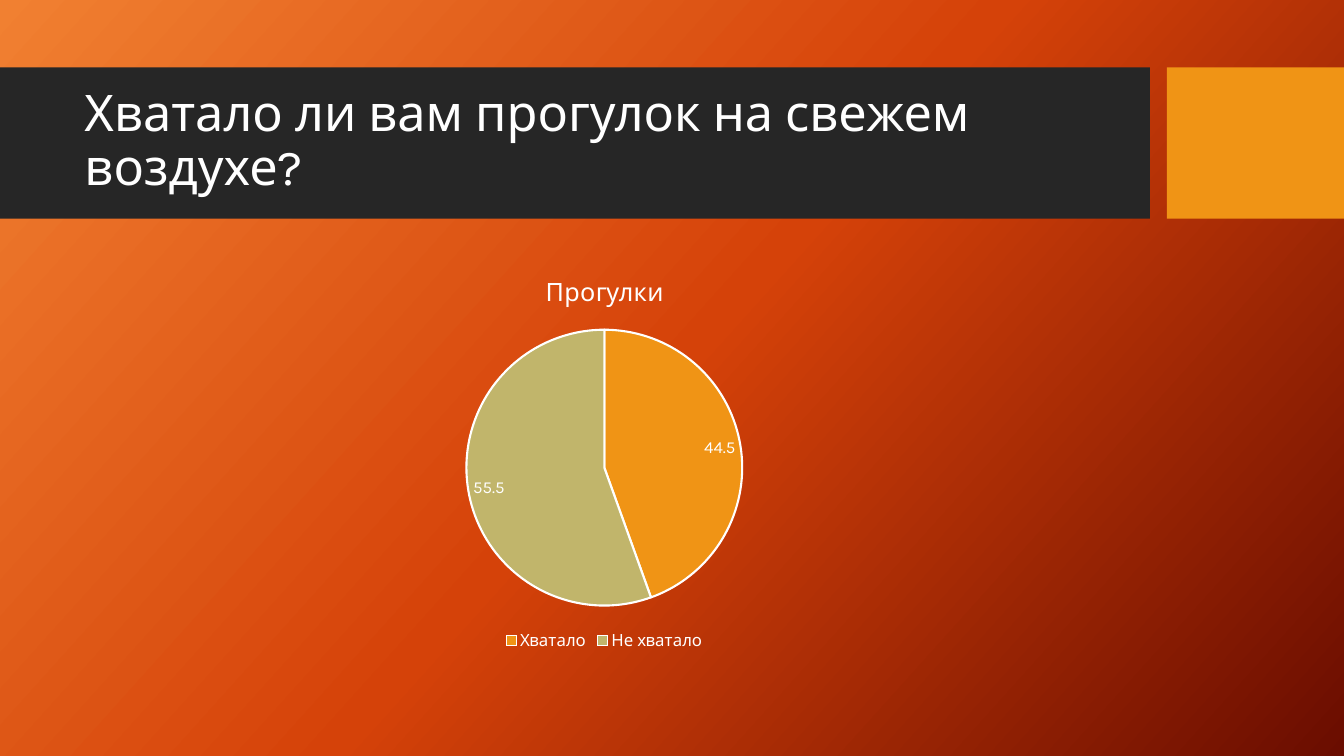
import copy

import pptx
import pptx.chart.data
import pptx.dml.color
import pptx.enum.chart
import pptx.enum.shapes
import pptx.enum.text
import pptx.util

Cm, Pt = pptx.util.Cm, pptx.util.Pt
RGB = pptx.dml.color.RGBColor.from_string

THEME = {
    "font": "Karla",
    "white": "FFFFFF",
    "band": "262626",
    "accent": "F09415",
    "slices": ["F09415", "C1B56B"],
    "background": [(0, "F18031"), (0.5, "D54209"), (1, "6A0D00")],
    "title": 36,
    "chart_title": 18,
    "chart_text": 12,
}


def set_font(font, size):
    for name, value in {"name": THEME["font"], "size": Pt(size), "bold": False}.items():
        setattr(font, name, value)
    font.color.rgb = RGB(THEME["white"])


prs = pptx.Presentation()
prs.slide_width, prs.slide_height = Cm(33.87), Cm(19.05)
s = prs.slides.add_slide(prs.slide_layouts[6])

# Background gradient with a third stop
fill = s.background.fill
fill.gradient()
fill.gradient_angle = 360 - 42
stops = s.element.xpath(".//a:gsLst")[0]
stops.append(copy.deepcopy(stops[-1]))
for stop, (position, color) in zip(fill.gradient_stops, THEME["background"]):
    stop.position = position
    stop.color.rgb = RGB(color)

# Title band and accent block
for left, width, color in [(0, 28.98, "band"), (29.41, 4.46, "accent")]:
    sp = s.shapes.add_shape(pptx.enum.shapes.MSO_SHAPE.RECTANGLE,
                            Cm(left), Cm(1.7), Cm(width), Cm(3.81))
    sp.shadow.inherit = False
    sp.fill.solid()
    sp.fill.fore_color.rgb = RGB(THEME[color])
    sp.line.fill.background()

# Title
tf = s.shapes.add_textbox(Cm(1.88), Cm(2.08), Cm(26.7), Cm(3)).text_frame
tf.word_wrap = True
tf.vertical_anchor = pptx.enum.text.MSO_ANCHOR.MIDDLE
p = tf.paragraphs[0]
p.line_spacing = 0.9
r = p.add_run()
r.text = "Хватало ли вам прогулок на свежем воздухе?"
set_font(r.font, THEME["title"])

# Pie chart
data = pptx.chart.data.CategoryChartData()
data.categories = ["Хватало", "Не хватало"]
data.add_series("Прогулки", [44.5, 55.5])
chart = s.shapes.add_chart(pptx.enum.chart.XL_CHART_TYPE.PIE,
                           Cm(1.88), Cm(6.5), Cm(26.7), Cm(10), data).chart
set_font(chart.font, THEME["chart_text"])

chart.has_title = True
p = chart.chart_title.text_frame.paragraphs[0]
r = p.add_run()
r.text = "Прогулки"
set_font(r.font, THEME["chart_title"])

chart.has_legend = True
legend = chart.legend
legend.position = pptx.enum.chart.XL_LEGEND_POSITION.BOTTOM
legend.include_in_layout = False
set_font(legend.font, THEME["chart_text"])

# Slices and value labels
plot = chart.plots[0]
plot.vary_by_categories = True
for i, color in enumerate(THEME["slices"]):
    fmt = plot.series[0].points[i].format
    fmt.fill.solid()
    fmt.fill.fore_color.rgb = RGB(color)
    fmt.line.color.rgb = RGB(THEME["white"])
    fmt.line.width = Pt(1.5)

labels = plot.series[0].data_labels
set_font(labels.font, THEME["chart_text"])
labels.show_value = True
labels.position = pptx.enum.chart.XL_LABEL_POSITION.BEST_FIT

prs.save("out.pptx")
